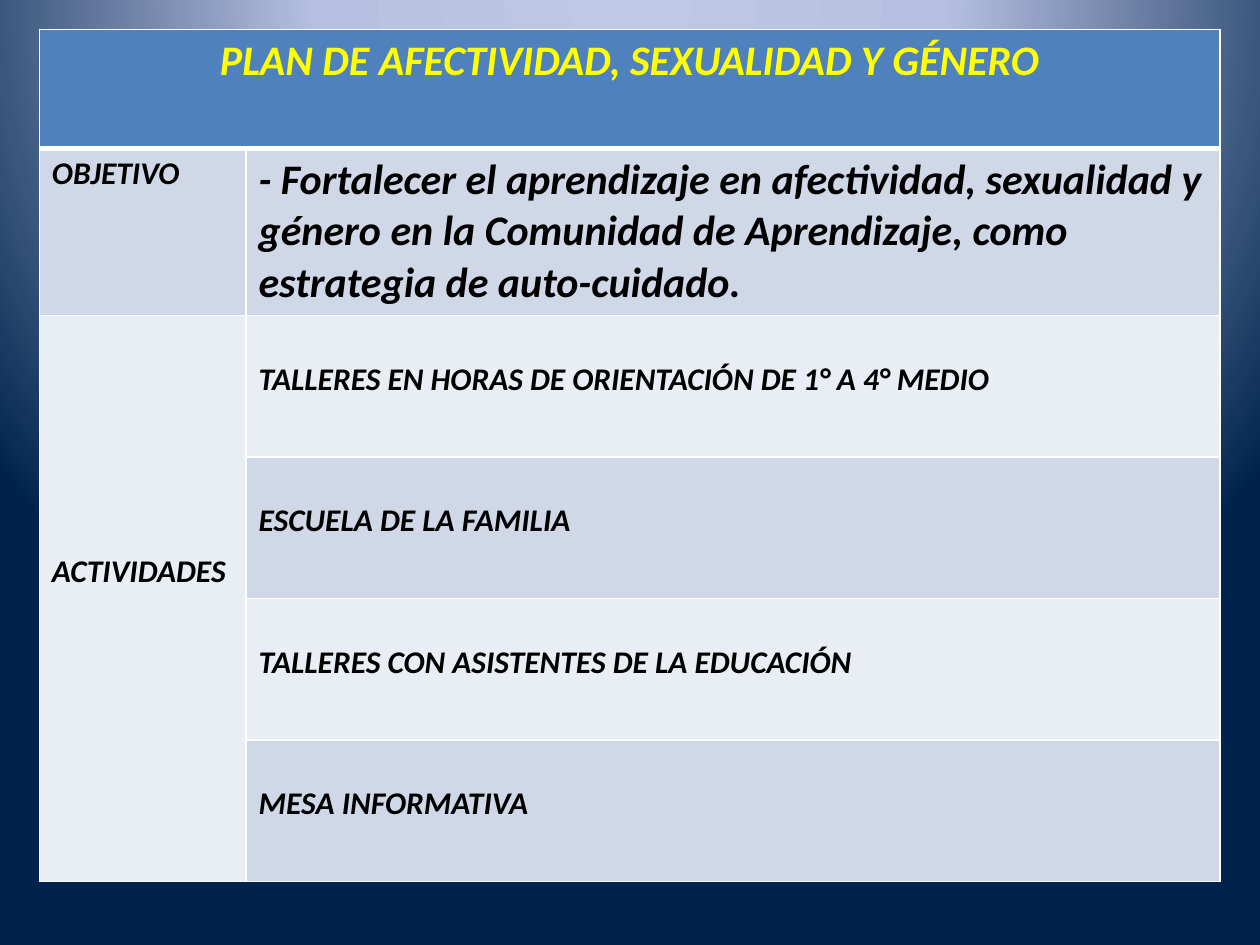
from dataclasses import dataclass

from lxml.etree import SubElement
from pptx import Presentation
from pptx.dml.color import RGBColor
from pptx.enum.text import PP_ALIGN
from pptx.oxml import parse_xml
from pptx.oxml.ns import nsdecls, qn
from pptx.table import Table, _Cell
from pptx.util import Pt

WHITE = RGBColor(0xFF, 0xFF, 0xFF)
BLACK = RGBColor(0x00, 0x00, 0x00)
YELLOW = RGBColor(0xFF, 0xFF, 0x00)
HEADER_BLUE = RGBColor(0x4F, 0x81, 0xBD)
BAND_DARK = RGBColor(0xD0, 0xD8, 0xE8)
BAND_LIGHT = RGBColor(0xE9, 0xED, 0xF4)
GLOW = RGBColor(0xBF, 0xC9, 0xE5)
HALO = RGBColor(0xB5, 0xC0, 0xE0)
NAVY = RGBColor(0x00, 0x23, 0x4D)

GRADIENT_STOPS = ((0, GLOW), (40, HALO), (100, NAVY))
TABLE_LEFT, TABLE_TOP = 22.5, 16.8
COLUMN_WIDTHS = (118.1, 556.6)
ACTIVITY_HEIGHT = 80.9
ROW_HEIGHTS = (68, 95.4) + (ACTIVITY_HEIGHT,) * 4
CELL_PADDING = 3.6
LINE_HEIGHT = 22
ACTIVITIES = (
    "TALLERES EN HORAS DE ORIENTACIÓN DE 1° A 4° MEDIO",
    "ESCUELA DE LA FAMILIA",
    "TALLERES CON ASISTENTES DE LA EDUCACIÓN",
    "MESA INFORMATIVA",
)


@dataclass(frozen=True)
class Entry:
    """Text and look of one table cell."""

    row: int
    column: int
    text: str
    fill: RGBColor
    size: float = 18
    color: RGBColor = BLACK
    align: PP_ALIGN = PP_ALIGN.LEFT
    lines_above: int = 0
    row_span: int = 1
    column_span: int = 1


def paint_background(page) -> None:
    """Fill the page with a round glow centred above its top edge."""
    page.background.fill.background()
    properties = page.background._cSld.bg.bgPr
    stops = "".join(
        f'<a:gs pos="{position * 1000}"><a:srgbClr val="{color}"/></a:gs>'
        for position, color in GRADIENT_STOPS
    )
    gradient = parse_xml(
        f'<a:gradFill rotWithShape="1" {nsdecls("a")}><a:gsLst>{stops}</a:gsLst>'
        '<a:path path="circle"><a:fillToRect l="50000" t="-80000" r="50000" b="180000"/>'
        "</a:path></a:gradFill>"
    )
    properties.replace(properties[0], gradient)


def draw_borders(cell: _Cell, widths: dict[str, float]) -> None:
    """Give a cell white borders of the given widths."""
    properties = cell._tc.get_or_add_tcPr()
    for side, width in widths.items():
        line = SubElement(properties, qn(f"a:ln{side}"), w=str(Pt(width)))
        fill = SubElement(line, qn("a:solidFill"))
        SubElement(fill, qn("a:srgbClr"), val=str(WHITE))


def write_entry(table: Table, entry: Entry) -> None:
    """Merge, fill and write one cell."""
    cell = table.cell(entry.row, entry.column)
    if entry.row_span * entry.column_span > 1:
        cell.merge(table.cell(entry.row + entry.row_span - 1,
                              entry.column + entry.column_span - 1))
    cell.fill.solid()
    cell.fill.fore_color.rgb = entry.fill
    cell.margin_top = Pt(CELL_PADDING + entry.lines_above * LINE_HEIGHT)
    para = cell.text_frame.paragraphs[0]
    para.alignment = entry.align
    span = para.add_run()
    span.text = entry.text
    font_format = {"name": "Calibri", "size": Pt(entry.size), "bold": True, "italic": True}
    for name, value in font_format.items():
        setattr(span.font, name, value)
    span.font.color.rgb = entry.color


def add_plan_table(page, entries: list[Entry]) -> None:
    """Add the plan table and write its entries."""
    frame = page.shapes.add_table(
        len(ROW_HEIGHTS), len(COLUMN_WIDTHS), Pt(TABLE_LEFT), Pt(TABLE_TOP),
        Pt(sum(COLUMN_WIDTHS)), Pt(sum(ROW_HEIGHTS)),
    )
    table = frame.table
    for name, value in {"first_row": False, "horz_banding": False}.items():
        setattr(table, name, value)
    for column, width in zip(table.columns, COLUMN_WIDTHS):
        column.width = Pt(width)
    for index, (row, height) in enumerate(zip(table.rows, ROW_HEIGHTS)):
        row.height = Pt(height)
        for cell in row.cells:
            draw_borders(cell, {"L": 1, "R": 1, "T": 3 if index == 1 else 1,
                                "B": 3 if index == 0 else 1})
    for entry in entries:
        write_entry(table, entry)


def main() -> None:
    """Build the one-page deck."""
    deck = Presentation()
    deck.slide_width, deck.slide_height = Pt(720), Pt(540)
    page = deck.slides.add_slide(deck.slide_layouts[6])
    paint_background(page)
    entries = [
        Entry(0, 0, "PLAN DE AFECTIVIDAD, SEXUALIDAD Y GÉNERO", HEADER_BLUE, size=24,
              color=YELLOW, align=PP_ALIGN.CENTER, column_span=2),
        Entry(1, 0, "OBJETIVO", BAND_DARK),
        Entry(1, 1, "- Fortalecer el aprendizaje en afectividad, sexualidad y género en la "
              "Comunidad de Aprendizaje, como estrategia de auto-cuidado.", BAND_DARK, size=24),
        Entry(2, 0, "ACTIVIDADES", BAND_LIGHT, lines_above=6, row_span=len(ACTIVITIES)),
    ]
    entries += [
        Entry(row, 1, text, BAND_DARK if row % 2 else BAND_LIGHT, lines_above=1)
        for row, text in enumerate(ACTIVITIES, start=2)
    ]
    add_plan_table(page, entries)
    deck.save("out.pptx")


if __name__ == "__main__":
    main()
